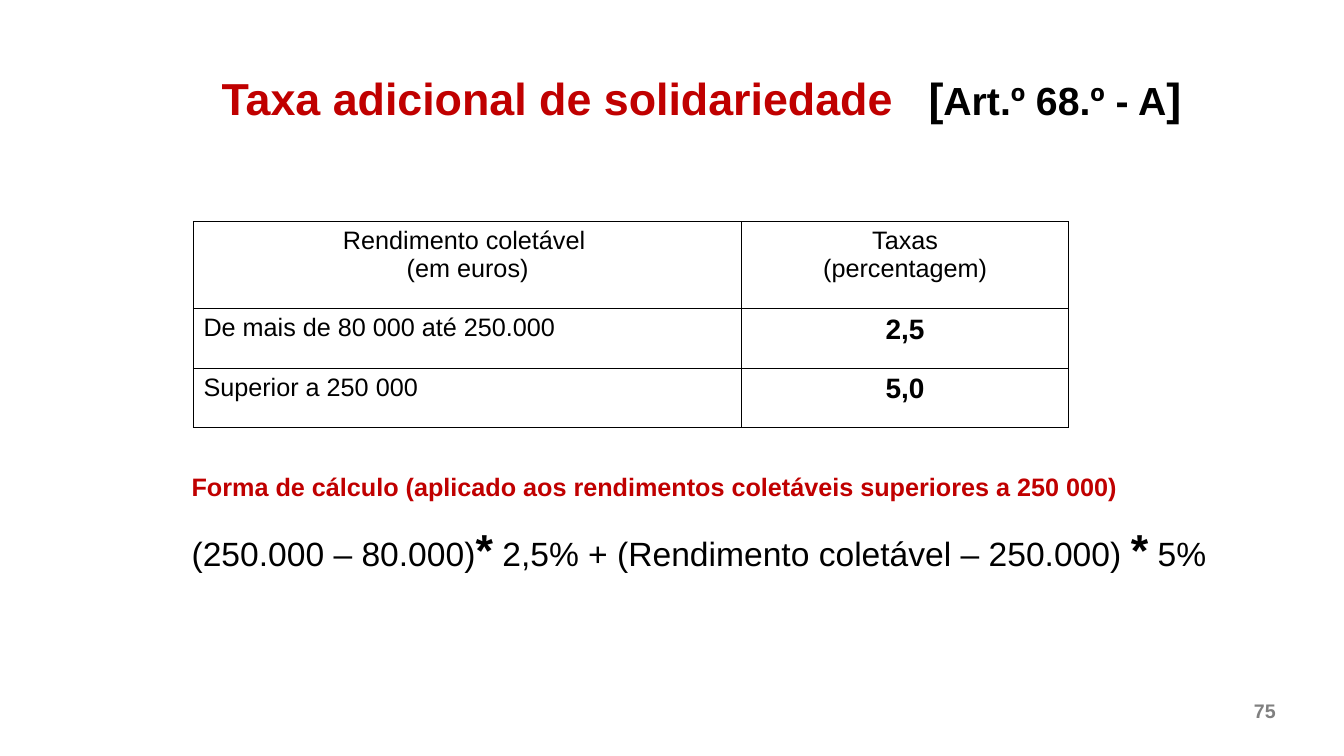
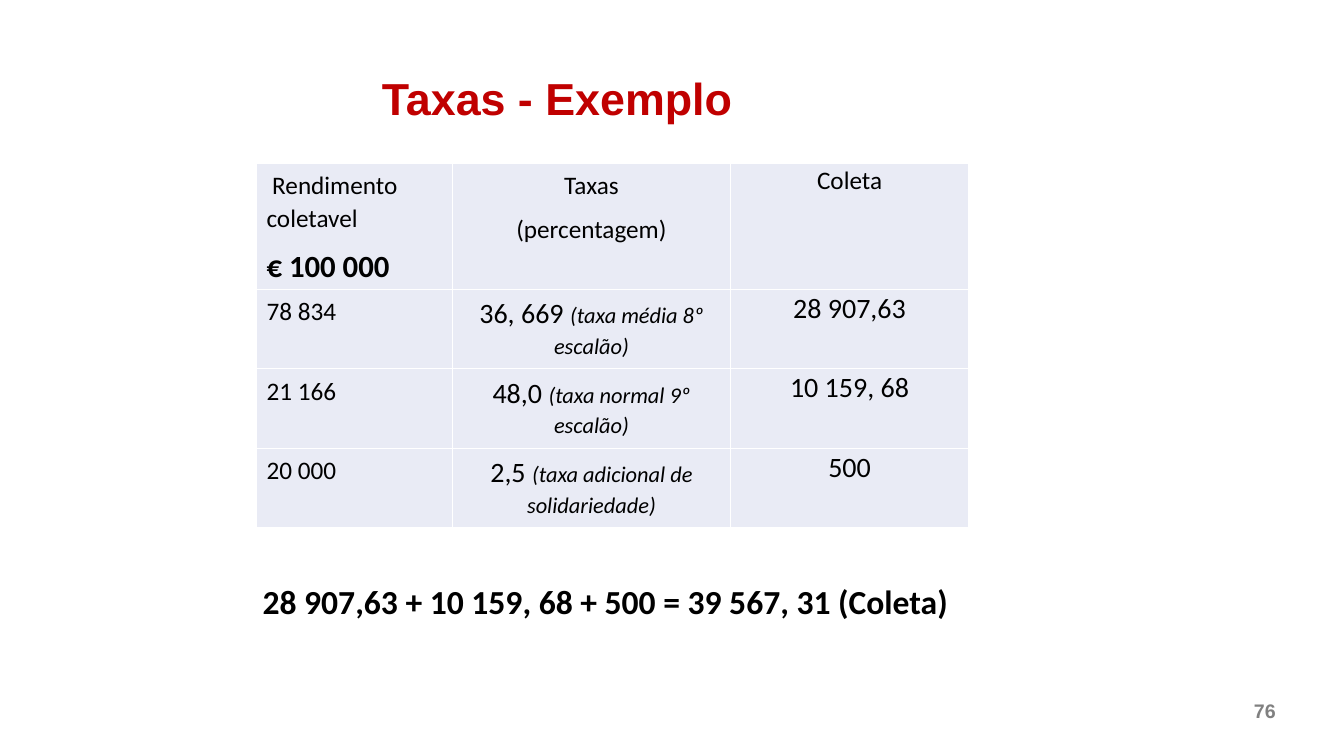
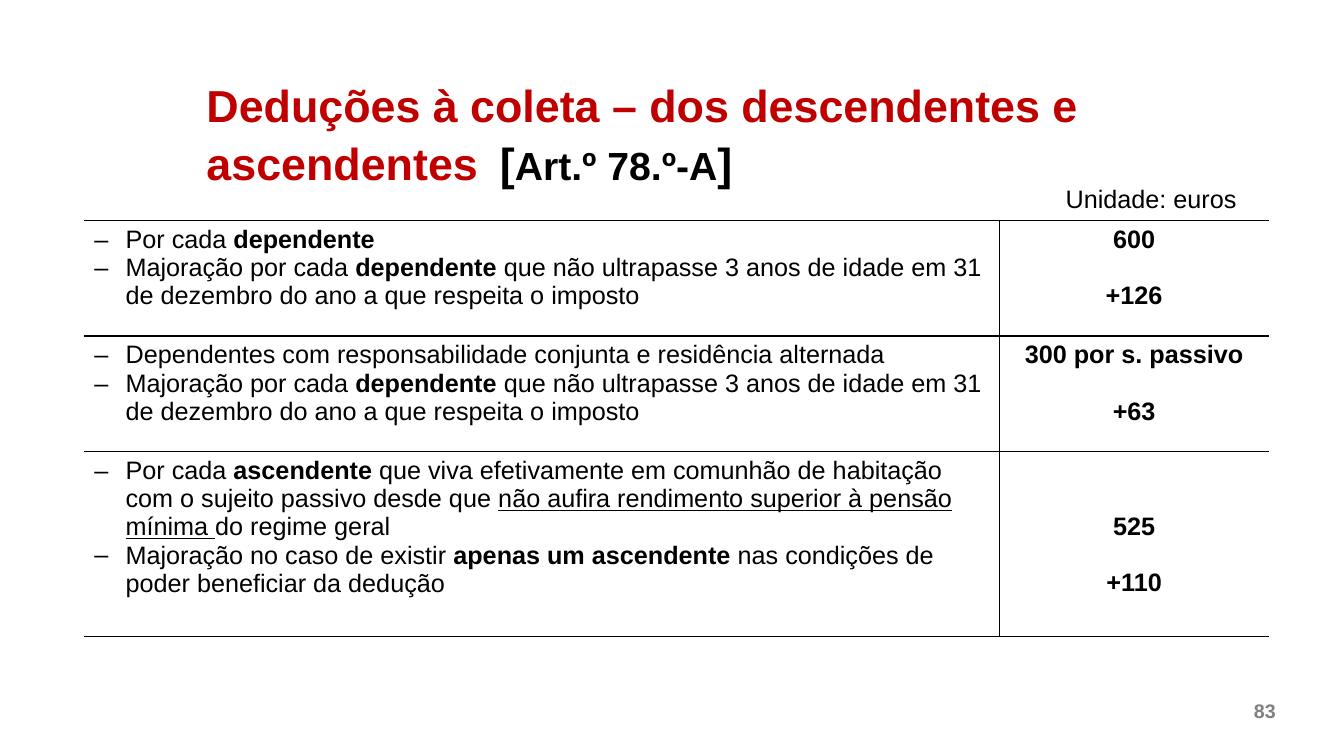
from dataclasses import dataclass, replace
from typing import Optional, Sequence

from lxml import etree
from pptx import Presentation
from pptx.dml.color import RGBColor
from pptx.enum.text import MSO_ANCHOR, PP_ALIGN
from pptx.oxml.ns import qn
from pptx.util import Pt

LEFT, MID = PP_ALIGN.LEFT, PP_ALIGN.CENTER
TOP, BOTTOM = MSO_ANCHOR.TOP, MSO_ANCHOR.BOTTOM


@dataclass(frozen=True)
class Theme:
    sans: str = "Arial"
    hand: str = "Calibri"
    ink: str = "000000"
    red: str = "C00000"
    grey: str = "808080"
    white: str = "FFFFFF"
    pale: str = "E9EBF5"
    head: int = 32
    cite: int = 28
    sum: int = 24
    key: int = 22
    rate: int = 20
    body: int = 18
    note: int = 16
    page: int = 14


T = Theme()
LINE = 20.1  # height of one line of body text
PAD = 3.6
SIDE = 7.2


@dataclass(frozen=True)
class Run:
    text: str
    size: int = T.body
    bold: bool = False
    ital: bool = False
    under: bool = False
    color: str = T.ink
    font: str = T.sans


@dataclass(frozen=True)
class Para:
    runs: Sequence[Run]
    align: PP_ALIGN = LEFT
    before: float = 0
    after: float = 0
    lead: float = 1
    tab: Optional[float] = None
    dash: bool = False


@dataclass(frozen=True)
class Box:
    left: float
    top: float
    width: float
    height: float

    def args(self) -> list:
        return [Pt(n) for n in (self.left, self.top, self.width, self.height)]


@dataclass(frozen=True)
class Cell:
    paras: Sequence[Para]
    top: float = PAD
    side: float = SIDE
    edges: str = "LRTB"


@dataclass(frozen=True)
class Grid:
    left: float
    top: float
    cols: Sequence[float]
    rows: Sequence[float]
    cells: Sequence[Sequence[Cell]]
    line: str = T.ink
    fill: Optional[str] = None


def bold(text: str, size: int = T.body) -> Run:
    return Run(text, size, bold=True)


def write(frame, paras: Sequence[Para]) -> None:
    for i, para in enumerate(paras):
        item = frame.paragraphs[0] if i == 0 else frame.add_paragraph()
        props = item._p.get_or_add_pPr()
        if para.dash:
            props.set("marL", str(Pt(22.3)))
            props.set("indent", str(-Pt(22.3)))
            etree.SubElement(props, qn("a:buFont"), typeface=T.sans)
            etree.SubElement(props, qn("a:buChar"), char="–")
        if para.tab:
            stops = etree.SubElement(props, qn("a:tabLst"))
            etree.SubElement(stops, qn("a:tab"), pos=str(Pt(para.tab)), algn="l")
        item.alignment = para.align
        item.line_spacing = para.lead
        item.space_before, item.space_after = Pt(para.before), Pt(para.after)
        for part in para.runs:
            run = item.add_run()
            run.text = part.text
            font = run.font
            font.name, font.size = part.font, Pt(part.size)
            font.bold, font.italic, font.underline = part.bold, part.ital, part.under
            font.color.rgb = RGBColor.from_string(part.color)


def label(slide, box: Box, paras: Sequence[Para], anchor: MSO_ANCHOR = TOP) -> None:
    frame = slide.shapes.add_textbox(*box.args()).text_frame
    frame.word_wrap = True
    frame.vertical_anchor = anchor
    write(frame, paras)


def title(slide, left: float, top: float, text: str, cite: str = "", tab: float = 0) -> None:
    """Draw a red heading, with an optional bracketed article at a tab stop."""
    runs = [Run(text, T.head, True, color=T.red)]
    if cite:
        runs += [bold("\t[", T.head), bold(cite, T.cite), bold("]", T.head)]
    box = Box(left, top, 933 - left, 46)
    label(slide, box, [Para(runs, lead=1.08, tab=tab)])


def border(cell, edges: str, color: str) -> None:
    props = cell._tc.get_or_add_tcPr()
    for edge in "LRTB":
        line = etree.SubElement(props, qn(f"a:ln{edge}"), w=str(Pt(1)))
        if edge in edges:
            fill = etree.SubElement(line, qn("a:solidFill"))
            etree.SubElement(fill, qn("a:srgbClr"), val=color)
        else:
            etree.SubElement(line, qn("a:noFill"))


def table(slide, grid: Grid) -> None:
    box = Box(grid.left, grid.top, sum(grid.cols), sum(grid.rows))
    tab = slide.shapes.add_table(len(grid.rows), len(grid.cols), *box.args()).table
    tab.first_row = tab.horz_banding = False
    for col, width in zip(tab.columns, grid.cols):
        col.width = Pt(width)
    for row, height, line in zip(tab.rows, grid.rows, grid.cells):
        row.height = Pt(height)
        for cell, data in zip(row.cells, line):
            cell.margin_left = cell.margin_right = Pt(data.side)
            cell.margin_top, cell.margin_bottom = Pt(data.top), Pt(min(data.top, PAD))
            border(cell, data.edges, grid.line)
            if grid.fill:
                cell.fill.solid()
                cell.fill.fore_color.rgb = RGBColor.from_string(grid.fill)
            else:
                cell.fill.background()
            write(cell.text_frame, data.paras)


def start(deck, page: int):
    """Add a blank slide with its page number."""
    slide = deck.slides.add_slide(deck.slide_layouts[6])
    mark = Run(str(page), T.page, True, color=T.grey)
    label(slide, Box(874, 488, 59, 31.8), [Para([mark], MID)], BOTTOM)
    return slide


def extra(deck) -> None:
    slide = start(deck, 75)
    title(slide, 151.2, 43.8, "Taxa adicional de solidariedade", "Art.º 68.º - A", 505)
    heads = [("Rendimento coletável ", "(em euros)"), ("Taxas", "(percentagem)")]
    rates = [("De mais de 80 000 até 250.000", "2,5"), ("Superior a 250 000", "5,0")]
    cells = [[Cell([Para([Run(t)], MID) for t in pair]) for pair in heads]]
    for name, rate in rates:
        cells.append([Cell([Para([Run(name)])]),
                      Cell([Para([bold(rate, T.rate)], MID)])])
    table(slide, Grid(138.2, 158.4, (391.7, 233.3), (62.2, 42.4, 42.4), cells))
    star = bold("*", T.head)
    label(slide, Box(129.8, 333, 780, 85), [
        Para([Run("Forma de cálculo (aplicado aos rendimentos coletáveis "
                  "superiores a 250 000)", bold=True, color=T.red)]),
        Para([Run("(250.000 – 80.000)", T.sum), star,
              Run(" 2,5% + (Rendimento coletável – 250.000) ", T.sum), star,
              Run(" 5%", T.sum)], before=14.7),
    ])


def sample(deck) -> None:
    slide = start(deck, 76)
    title(slide, 265.7, 43.8, "Taxas - Exemplo")
    base = Run("", font=T.hand)

    def para(*runs: Run, align: PP_ALIGN = MID) -> Para:
        return Para(runs, align, after=8, lead=1.07)

    def text(words: str, size: int = T.body, **more) -> Run:
        return replace(base, text=words, size=size, **more)

    cells = [[
        Cell([para(text(" Rendimento coletavel"), align=LEFT),
              para(text("€ 100 000", T.key, bold=True), align=LEFT)]),
        Cell([para(text("Taxas")), para(text("(percentagem)"))]),
        Cell([para(text("Coleta"))], 0, 0),
    ]]
    steps = [
        ("78 834", "36, 669 ", "(taxa média 8º escalão)", "28 907,63"),
        ("21 166", "48,0 ", "(taxa normal 9º escalão)", "10 159, 68"),
        ("20 000", "2,5 ", "(taxa adicional de solidariedade)", "500"),
    ]
    for base_sum, rate, note, due in steps:
        cells.append([
            Cell([para(text(base_sum), align=LEFT)]),
            Cell([para(text(rate, T.rate), text(note, T.note, ital=True))]),
            Cell([para(text(due, T.rate))], 0, 0),
        ])
    table(slide, Grid(183.2, 116.8, (140.2, 198.2, 170.6), (90, *[56.7] * 3),
                      cells, T.white, T.pale))
    total = text("28 907,63 + 10 159, 68 + 500 = 39 567, 31 (Coleta)", T.sum, bold=True)
    label(slide, Box(180.5, 411.5, 560, 37), [Para([total])])


def relief(deck) -> None:
    slide = start(deck, 83)
    young = [Run("Majoração por cada "), bold("dependente"),
             Run(" que não ultrapasse 3 anos de idade em 31 de dezembro "
                 "do ano a que respeita o imposto")]
    old = [Run("Por cada "), bold("ascendente"),
           Run(" que viva efetivamente em comunhão de habitação com o sujeito "
               "passivo desde que "),
           Run("não aufira rendimento superior à pensão mínima ", under=True),
           Run("do regime geral")]
    lone = [Run("Majoração no caso de existir "), bold("apenas um ascendente "),
            Run("nas condições de poder beneficiar da dedução")]
    joint = [Run("Dependentes com responsabilidade conjunta e residência alternada")]
    rows = [
        ([Run("Por cada "), bold("dependente")], young, "600", "+126", 0),
        (joint, young, "300 por s. passivo", "+63", 0),
        (old, lone, "525", "+110", 2),
    ]
    cells = [
        [Cell([Para(first, dash=True), Para(then, dash=True)], edges="RTB"),
         Cell([Para([bold(sum_)], MID), Para([bold(more)], MID, before=LINE)],
              PAD + skip * LINE, edges="LTB")]
        for first, then, sum_, more, skip in rows
    ]
    table(slide, Grid(60.2, 157.5, (653.8, 192.2), (82.5, 82.5, 132), cells))
    title(slide, 140.4, 48.8, "Deduções à coleta – dos descendentes e ascendentes",
          "Art.º 78.º-A", 209.6)
    label(slide, Box(749.5, 127.4, 145.4, 29), [Para([Run("Unidade: euros")], MID)])


def main() -> None:
    deck = Presentation()
    deck.slide_width, deck.slide_height = Pt(960), Pt(540)
    for draw in (extra, sample, relief):
        draw(deck)
    deck.save("out.pptx")


if __name__ == "__main__":
    main()
